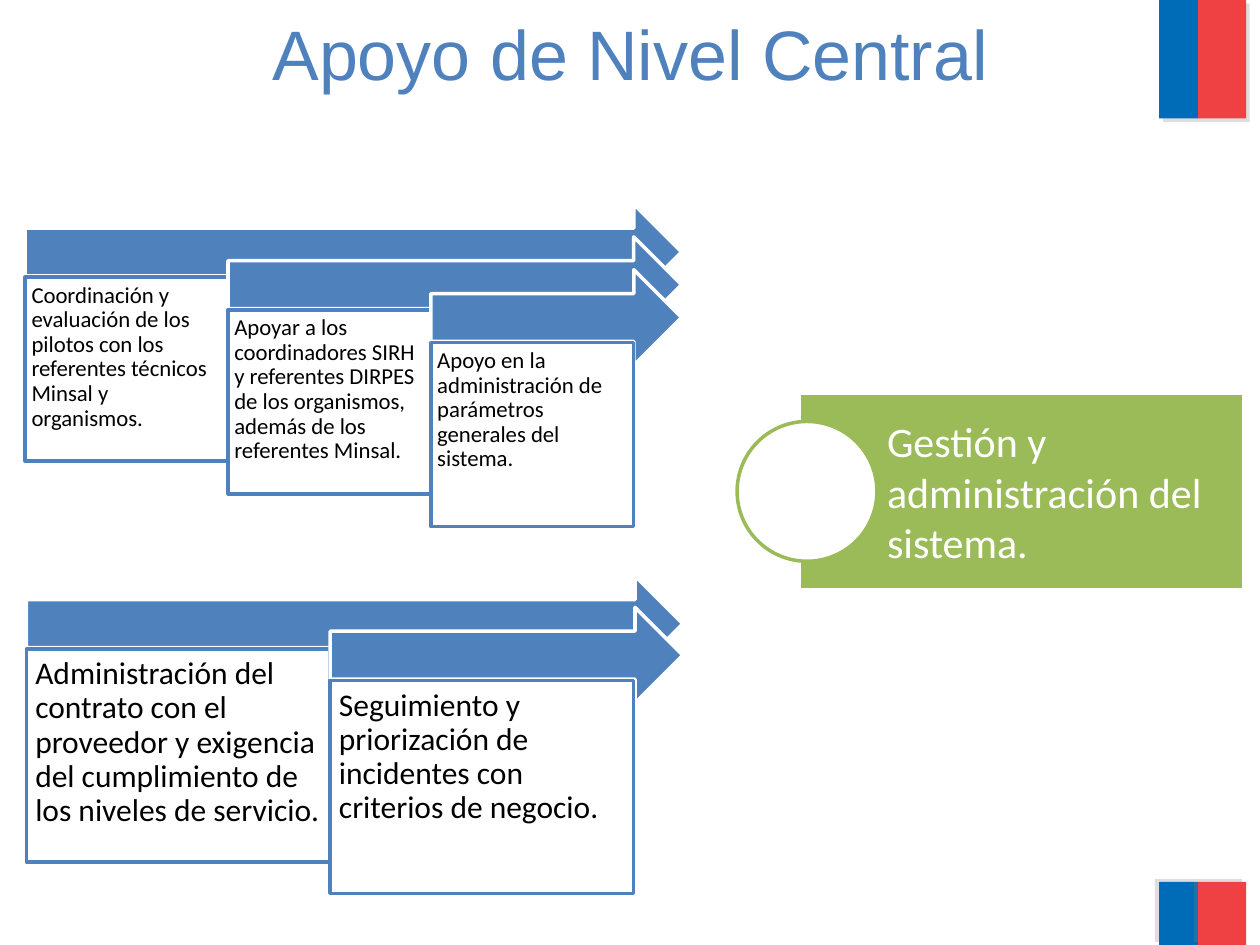
import dataclasses

import lxml.etree
import pptx
import pptx.dml.color
import pptx.enum.shapes
import pptx.enum.text
import pptx.oxml.ns
import pptx.util

Inches = pptx.util.Inches
Shapes = pptx.enum.shapes.MSO_SHAPE
Anchor = pptx.enum.text.MSO_ANCHOR
Align = pptx.enum.text.PP_ALIGN


@dataclasses.dataclass(frozen=True)
class Theme:
    """Colours, fonts and sizes of the slide."""
    blue: str = "4F81BD"
    green: str = "9BBB59"
    white: str = "FFFFFF"
    black: str = "000000"
    flag_blue: str = "006CB7"
    flag_red: str = "EF4144"
    shadow: str = "808080"
    title_font: str = "Arial"
    body_font: str = "Calibri"
    title_size: int = 40
    result_size: int = 24
    large_size: int = 18
    small_size: int = 13
    line_width: int = 2


THEME = Theme()


def colour(value):
    """Return a colour object for a hex value."""
    return pptx.dml.color.RGBColor.from_string(value)


def add_block(page, kind, box, fill, line=None):
    """Add a flat preset shape in a box of inches."""
    shape = page.shapes.add_shape(kind, *(Inches(length) for length in box))
    shape.shadow.inherit = False
    shape.fill.solid()
    shape.fill.fore_color.rgb = colour(fill)
    if line:
        shape.line.color.rgb = colour(line)
        shape.line.width = pptx.util.Pt(THEME.line_width)
    else:
        shape.line.fill.background()
    return shape


def write_text(shape, text, size, ink, font=THEME.body_font, align=Align.LEFT,
               anchor=Anchor.TOP, insets=None, spacing=None):
    """Write one formatted paragraph into a shape."""
    frame = shape.text_frame
    frame.word_wrap = True
    frame.auto_size = pptx.enum.text.MSO_AUTO_SIZE.NONE
    frame.vertical_anchor = anchor
    if insets:
        (frame.margin_left, frame.margin_top, frame.margin_right,
         frame.margin_bottom) = (Inches(inset) for inset in insets)
    para = frame.paragraphs[0]
    para.alignment = align
    if spacing:
        para.line_spacing = spacing
    span = para.add_run()
    span.text = text
    span.font.name = font
    span.font.size = pptx.util.Pt(size)
    span.font.color.rgb = colour(ink)


def add_shadow(shape, angle):
    """Give a shape a hard, translucent shadow."""
    qn = pptx.oxml.ns.qn
    effects = shape._element.spPr.find(qn("a:effectLst"))
    shadow = lxml.etree.SubElement(
        effects, qn("a:outerShdw"), dist=str(pptx.util.Pt(3)),
        dir=str(angle * 60000), algn="ctr", rotWithShape="0")
    tint = lxml.etree.SubElement(shadow, qn("a:srgbClr"), val=THEME.shadow)
    lxml.etree.SubElement(tint, qn("a:alpha"), val="25000")


def add_flag(page, box, angle):
    """Place the two-coloured band in its box."""
    left, top, width, height = box
    blue_width = 0.31
    for start, span_width, fill in (
            (left, blue_width, THEME.flag_blue),
            (left + blue_width, width - blue_width, THEME.flag_red)):
        band = add_block(page, Shapes.RECTANGLE,
                         (start, top, span_width, height), fill)
        add_shadow(band, angle)


def add_title(page, box):
    """Place and format the title placeholder."""
    title = page.shapes.title
    title.left, title.top, title.width, title.height = map(Inches, box)
    write_text(title, "Apoyo de Nivel Central", THEME.title_size, THEME.blue,
               THEME.title_font, Align.CENTER, Anchor.MIDDLE)


def add_cascade(page, box, tasks, card_size, step, type_size, inset):
    """Place descending arrows, each with a task card below its tail."""
    left, top, width, arrow_height = box
    card_width, card_height = card_size
    card_drop = 0.58
    for index, task in enumerate(tasks):
        shift, drop = index * card_width, index * step
        add_block(page, Shapes.RIGHT_ARROW,
                  (left + shift, top + drop, width - shift, arrow_height),
                  THEME.blue, THEME.white)
        card = add_block(page, Shapes.RECTANGLE,
                         (left + shift, top + drop + card_drop,
                          card_width, card_height),
                         THEME.white, THEME.blue)
        write_text(card, task, type_size, THEME.black,
                   insets=(inset,) * 4, spacing=0.9)


def add_result(page, box):
    """Place the green result panel and the circle on its left edge."""
    left, top, width, height = box
    panel = add_block(page, Shapes.RECTANGLE, box, THEME.green, THEME.white)
    write_text(panel, "Gestión y administración del sistema.",
               THEME.result_size, THEME.white, anchor=Anchor.MIDDLE,
               insets=(0.7, 0.05, 0.05, 0.05))
    diameter = 1.11
    circle = add_block(page, Shapes.OVAL,
                       (left - 0.49, top + (height - diameter) / 2,
                        diameter, diameter), THEME.white, THEME.green)
    circle.rotation = 359


def main():
    """Build the slide and save the deck."""
    deck = pptx.Presentation()
    deck.slide_width, deck.slide_height = Inches(10), Inches(7.5)
    page = deck.slides.add_slide(deck.slide_layouts[5])
    add_flag(page, (9.2, 0, 0.69, 0.94), 45)
    add_flag(page, (9.2, 7, 0.69, 0.5), 215)
    add_title(page, (0, 0.08, 10, 0.67))
    add_cascade(page, (0.2, 1.62, 5.21, 0.76), (
        "Coordinación y evaluación de los pilotos con los referentes "
        "técnicos Minsal y organismos.",
        "Apoyar a los coordinadores SIRH y referentes DIRPES de los "
        "organismos, además de los referentes Minsal.",
        "Apoyo en la administración de parámetros generales del sistema.",
    ), (1.61, 1.46), 0.26, THEME.small_size, 0.05)
    add_cascade(page, (0.21, 4.57, 5.21, 0.76), (
        "Administración del contrato con el proveedor y exigencia del "
        "cumplimiento de los niveles de servicio.",
        "Seguimiento y priorización de incidentes con criterios de negocio.",
    ), (2.41, 1.69), 0.25, THEME.large_size, 0.07)
    add_result(page, (6.34, 3.12, 3.53, 1.56))
    deck.save("out.pptx")


if __name__ == "__main__":
    main()
